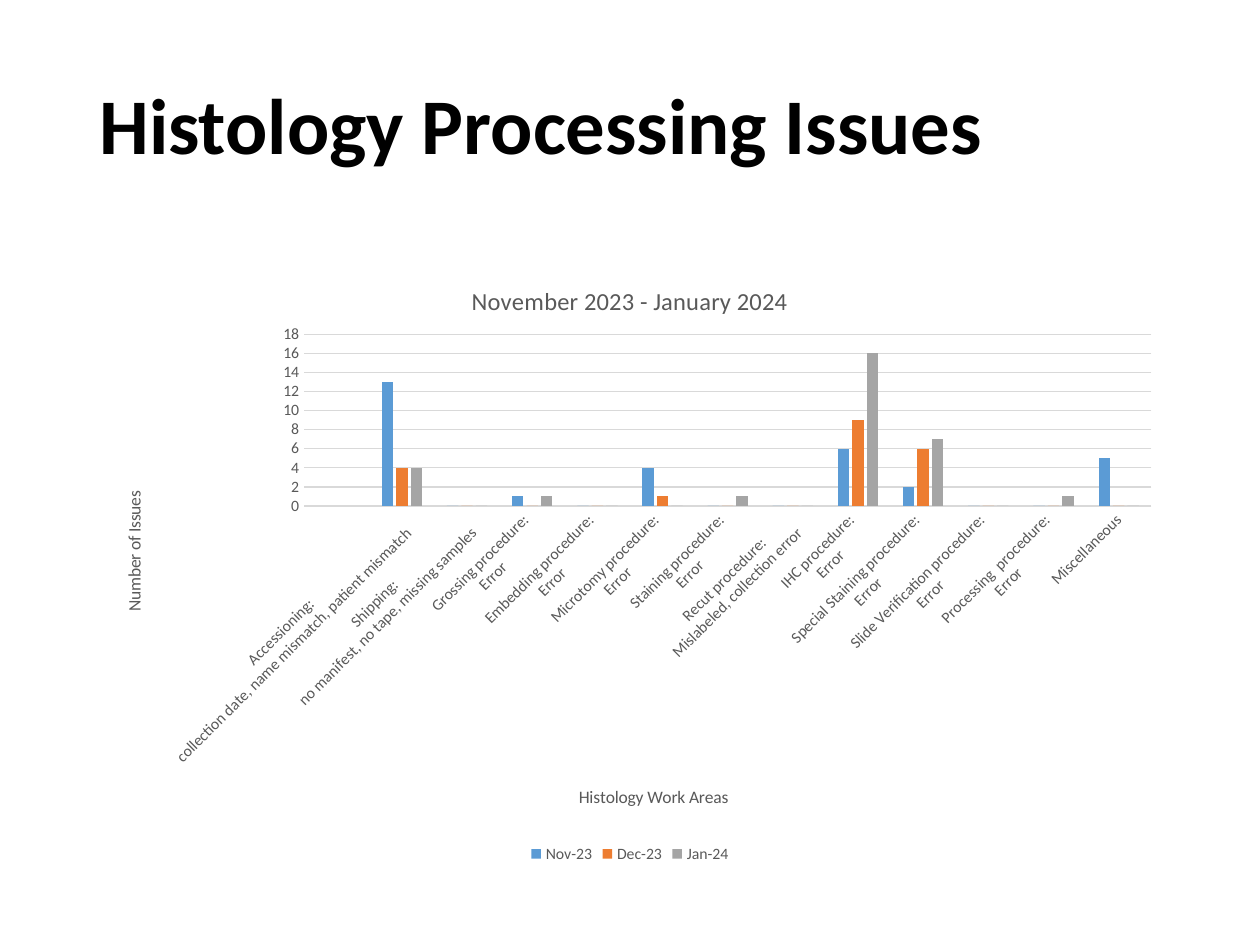
from lxml import etree
from pptx import Presentation
from pptx.chart.data import CategoryChartData
from pptx.dml.color import RGBColor
from pptx.enum.chart import XL_CHART_TYPE, XL_LEGEND_POSITION, XL_TICK_MARK
from pptx.enum.text import MSO_ANCHOR, PP_ALIGN
from pptx.oxml.ns import qn
from pptx.util import Inches, Pt

COLUMNS = XL_CHART_TYPE.COLUMN_CLUSTERED
BOTTOM = XL_LEGEND_POSITION.BOTTOM
NO_TICK = XL_TICK_MARK.NONE
MIDDLE = MSO_ANCHOR.MIDDLE
LEFT = PP_ALIGN.LEFT

FONT = "Calibri"
GREY = "595959"
RULE = "D9D9D9"
TITLE_BOX = (0.69, 0.2, 8.62, 1.65)
CHART_BOX = (0.69, 2.02, 8.62, 4.87)

WORK_AREAS = [
    ("", (None, None, None)),
    ("Accessioning:\ncollection date, name mismatch, patient mismatch", (13, 4, 4)),
    ("Shipping:\nno manifest, no tape, missing samples", (0, 0, 0)),
    ("Grossing procedure:\nError", (1, 0, 1)),
    ("Embedding procedure:\nError", (0, 0, 0)),
    ("Microtomy procedure:\nError", (4, 1, 0)),
    ("Staining procedure:\nError", (0, 0, 1)),
    ("Recut procedure:\nMislabeled, collection error", (0, 0, 0)),
    ("IHC procedure:\nError", (6, 9, 16)),
    ("Special Staining procedure:\nError", (2, 6, 7)),
    ("Slide Verification procedure:\nError", (0, 0, 0)),
    ("Processing  procedure:\nError", (0, 0, 1)),
    ("Miscellaneous", (5, 0, 0)),
]
MONTHS = [("Nov-23", "5B9BD5"), ("Dec-23", "ED7D31"), ("Jan-24", "A5A5A5")]


def colour(value):
    """Turn a hex string into a colour."""
    return RGBColor.from_string(value)


def style_font(font, size, value, bold=False):
    """Set face, size, colour and weight of a font."""
    font.name, font.size, font.bold = FONT, Pt(size), bold
    font.color.rgb = colour(value)


def style_line(line, value):
    """Draw a thin line in the given colour."""
    line.color.rgb = colour(value)
    line.width = Pt(0.75)


def set_layout(parent, index, **shares):
    """Place a chart part by shares of the chart's size."""
    for old in parent.findall(qn("c:layout")):
        parent.remove(old)
    layout = etree.Element(qn("c:layout"))
    manual = etree.SubElement(layout, qn("c:manualLayout"))
    settings = {"xMode": "edge", "yMode": "edge", **shares}
    if "w" in shares:
        settings = {"layoutTarget": "inner", **settings}
    for name, value in settings.items():
        etree.SubElement(manual, qn(f"c:{name}")).set("val", str(value))
    parent.insert(index, layout)


def add_caption(owner, text, size, x, y):
    """Give a chart or an axis its title at a fixed place."""
    owner.has_title = True
    title = owner.chart_title if hasattr(owner, "chart_title") else owner.axis_title
    title.text_frame.text = text
    style_font(title.text_frame.paragraphs[0].runs[0].font, size, GREY)
    set_layout(title.element, 1, x=x, y=y)


def fill_title(page, box):
    """Write the slide heading into the title placeholder."""
    title = page.shapes.title
    title.left, title.top, title.width, title.height = map(Inches, box)
    frame = title.text_frame
    frame.text = "Histology Processing Issues"
    frame.vertical_anchor = MIDDLE
    para = frame.paragraphs[0]
    para.alignment = LEFT
    para.line_spacing = 0.9
    style_font(para.runs[0].font, 45, "000000", bold=True)


def style_axes(chart):
    """Format both axes, their labels and their titles."""
    areas, issues = chart.category_axis, chart.value_axis
    for axis in (areas, issues):
        axis.major_tick_mark = axis.minor_tick_mark = NO_TICK
        style_font(axis.tick_labels.font, 9, GREY)
    style_line(areas.format.line, RULE)
    issues.format.line.fill.background()
    issues.minimum_scale, issues.maximum_scale, issues.major_unit = 0, 18, 2
    issues.has_major_gridlines = True
    style_line(issues.major_gridlines.format.line, RULE)
    add_caption(areas, "Histology Work Areas", 10, 0.45, 0.86)
    add_caption(issues, "Number of Issues", 10, 0.03, 0.38)
    for place, angle in (("c:catAx/c:txPr", -45), ("c:valAx/c:title/c:tx/c:rich", -90)):
        body = chart.element.xpath(f"c:chart/c:plotArea/{place}/a:bodyPr")[0]
        body.set("rot", str(angle * 60000))
        body.set("vert", "horz")


def add_issue_chart(page, box):
    """Chart the issues of each work area by month."""
    data = CategoryChartData()
    data.categories = [area for area, _ in WORK_AREAS]
    for index, (month, _) in enumerate(MONTHS):
        data.add_series(month, [counts[index] for _, counts in WORK_AREAS])
    chart = page.shapes.add_chart(COLUMNS, *map(Inches, box), data).chart
    style_font(chart.font, 10, "000000")
    plot = chart.plots[0]
    plot.gap_width, plot.overlap = 219, -27
    plot.vary_by_categories = False
    for series, (_, value) in zip(plot.series, MONTHS):
        series.format.fill.solid()
        series.format.fill.fore_color.rgb = colour(value)
    set_layout(chart.element.xpath("c:chart/c:plotArea")[0], 0,
               x=0.2, y=0.13, w=0.78, h=0.28)
    add_caption(chart, "November 2023 - January 2024", 14, 0.35, 0.04)
    style_axes(chart)
    chart.has_legend = True
    chart.legend.position = BOTTOM
    chart.legend.include_in_layout = False
    style_font(chart.legend.font, 9, GREY)


def main():
    """Build the deck and save it."""
    deck = Presentation()
    deck.slide_width, deck.slide_height = Inches(10), Inches(7.5)
    page = deck.slides.add_slide(deck.slide_layouts.get_by_name("Title Only"))
    fill_title(page, TITLE_BOX)
    add_issue_chart(page, CHART_BOX)
    deck.save("out.pptx")


if __name__ == "__main__":
    main()
